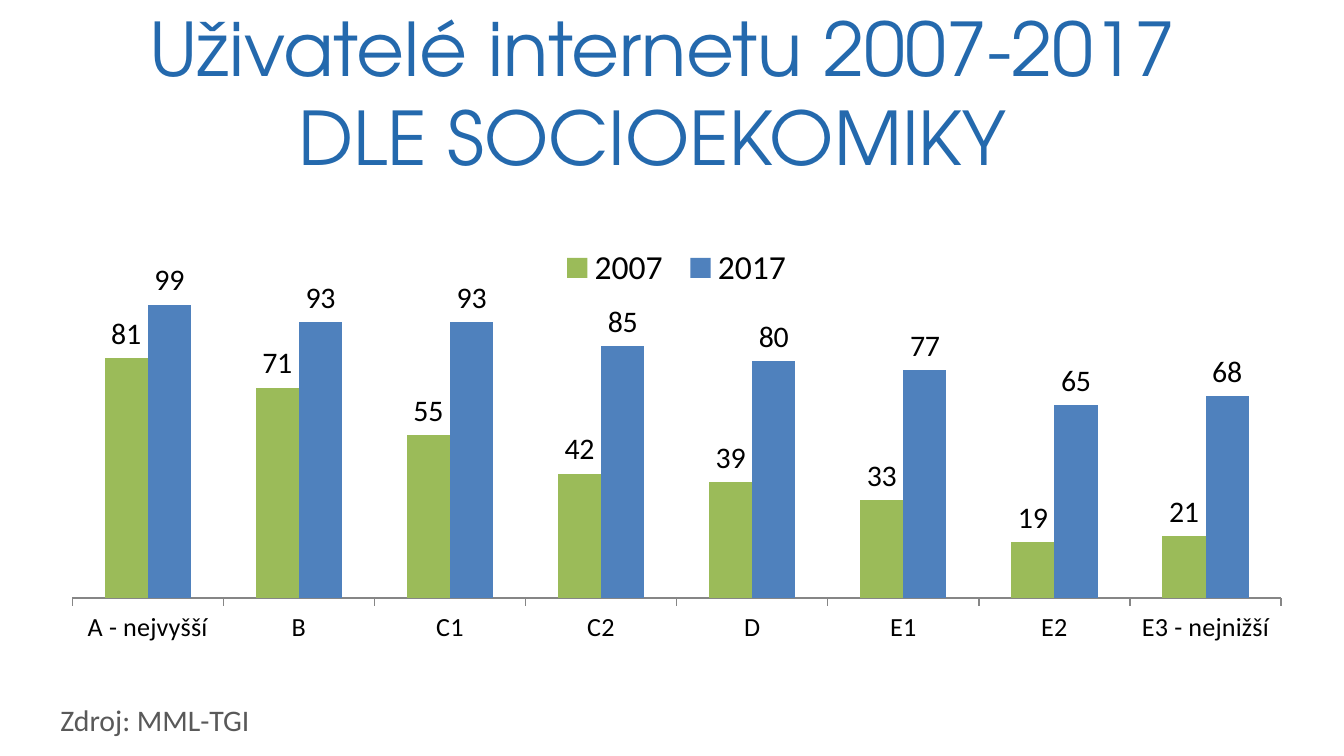
from lxml import etree
from pptx import Presentation
from pptx import util as u
from pptx.chart.data import CategoryChartData
from pptx.dml.color import RGBColor
from pptx.enum import chart as ch, text as tx

TITLE = RGBColor(0x24, 0x69, 0xAD)
BLACK = RGBColor(0, 0, 0)
GRAY = RGBColor(0x59, 0x59, 0x59)
AXIS = RGBColor(0x86, 0x86, 0x86)
GREEN = RGBColor(0x9B, 0xBB, 0x59)
BLUE = RGBColor(0x4F, 0x81, 0xBD)

GROUPS = ["A - nejvyšší", "B", "C1", "C2", "D", "E1", "E2", "E3 - nejnižší"]
YEARS = [
    ("2007", GREEN, [81, 71, 55, 42, 39, 33, 19, 21]),
    ("2017", BLUE, [99, 93, 93, 85, 80, 77, 65, 68]),
]


def assign(item, **vals):
    """Set each named attribute of an item."""
    for key, val in vals.items():
        setattr(item, key, val)


def style(font, size, color, name="Calibri"):
    """Give a font its size, colour and face."""
    assign(font, size=u.Pt(size), name=name, bold=False)
    font.color.rgb = color


def place(shape, box):
    """Move a shape to a box given in inches."""
    keys = ("left", "top", "width", "height")
    assign(shape, **dict(zip(keys, map(u.Inches, box))))


def pin(node, before, **spots):
    """Fix the layout of a chart part ahead of the named child."""
    tag = f"{{{node.nsmap['c']}}}"
    for old in node.findall(tag + "layout"):
        node.remove(old)
    frame = etree.Element(tag + "layout")
    spot = etree.SubElement(frame, tag + "manualLayout")
    for key, val in spots.items():
        etree.SubElement(spot, tag + key).set("val", str(val))
    node.find(tag + before).addprevious(frame)


def add_title(slide, box):
    """Fill and format the title placeholder."""
    title = slide.shapes.title
    place(title, box)
    frame = title.text_frame
    assign(frame, word_wrap=True, auto_size=tx.MSO_AUTO_SIZE.NONE,
           vertical_anchor=tx.MSO_ANCHOR.MIDDLE)
    para = frame.paragraphs[0]
    para.text = "Uživatelé internetu 2007-2017\vDLE SOCIOEKOMIKY "
    para.alignment = tx.PP_ALIGN.CENTER
    for run in para.runs:
        style(run.font, 39.6, TITLE, "TeX Gyre Adventor")


def add_bars(slide, box):
    """Add the clustered column chart of users by group."""
    data = CategoryChartData(number_format="#,##0")
    data.categories = GROUPS
    for name, _, vals in YEARS:
        data.add_series(name, vals)
    chart = slide.shapes.add_chart(
        ch.XL_CHART_TYPE.COLUMN_CLUSTERED, *map(u.Inches, box), data).chart
    assign(chart, has_title=False, has_legend=True)
    style(chart.font, 18, BLACK)
    assign(chart.legend, position=ch.XL_LEGEND_POSITION.TOP,
           include_in_layout=False)
    style(chart.legend.font, 18, BLACK)

    axis = chart.category_axis
    assign(axis, major_tick_mark=ch.XL_TICK_MARK.OUTSIDE,
           has_major_gridlines=False)
    style(axis.tick_labels.font, 14, BLACK)
    axis.format.line.color.rgb = AXIS
    scale = chart.value_axis
    assign(scale, minimum_scale=0, maximum_scale=100,
           has_major_gridlines=False, visible=False)
    assign(scale.tick_labels, number_format="#,##0.0",
           number_format_is_linked=False)

    plot = chart.plots[0]
    assign(plot, gap_width=150, overlap=0, vary_by_categories=False)
    for bars, (_, color, _) in zip(plot.series, YEARS):
        bars.format.fill.solid()
        bars.format.fill.fore_color.rgb = color
        tags = bars.data_labels
        assign(tags, show_value=True, number_format="#,##0",
               number_format_is_linked=False,
               position=ch.XL_LABEL_POSITION.OUTSIDE_END)
        style(tags.font, 16, BLACK)

    root = chart.element.chart
    edge = {"xMode": "edge", "yMode": "edge"}
    pin(root.plotArea, "barChart", layoutTarget="inner", **edge,
        x=0.02, y=0.17, w=0.96, h=0.7)
    pin(root.find("c:legend", root.nsmap), "overlay", **edge,
        x=0.4, y=0.03, w=0.2, h=0.12)


def add_source(slide, box):
    """Add the source line below the chart."""
    note = slide.shapes.add_textbox(*map(u.Inches, box))
    frame = note.text_frame
    assign(frame, word_wrap=True,
           auto_size=tx.MSO_AUTO_SIZE.SHAPE_TO_FIT_TEXT)
    run = frame.paragraphs[0].add_run()
    run.text = "Zdroj: MML-TGI"
    style(run.font, 16, GRAY)


def main():
    """Build and save the slide."""
    deck = Presentation()
    wide = u.Inches(10)
    assign(deck, slide_width=wide, slide_height=wide * 9 // 16)
    slide = deck.slides.add_slide(deck.slide_layouts[5])
    add_title(slide, (0.43, 0.21, 9, 0.94))
    add_bars(slide, (0.35, 1.71, 9.37, 3.15))
    add_source(slide, (0.35, 5.17, 3.15, 0.37))
    deck.save("out.pptx")


if __name__ == "__main__":
    main()
